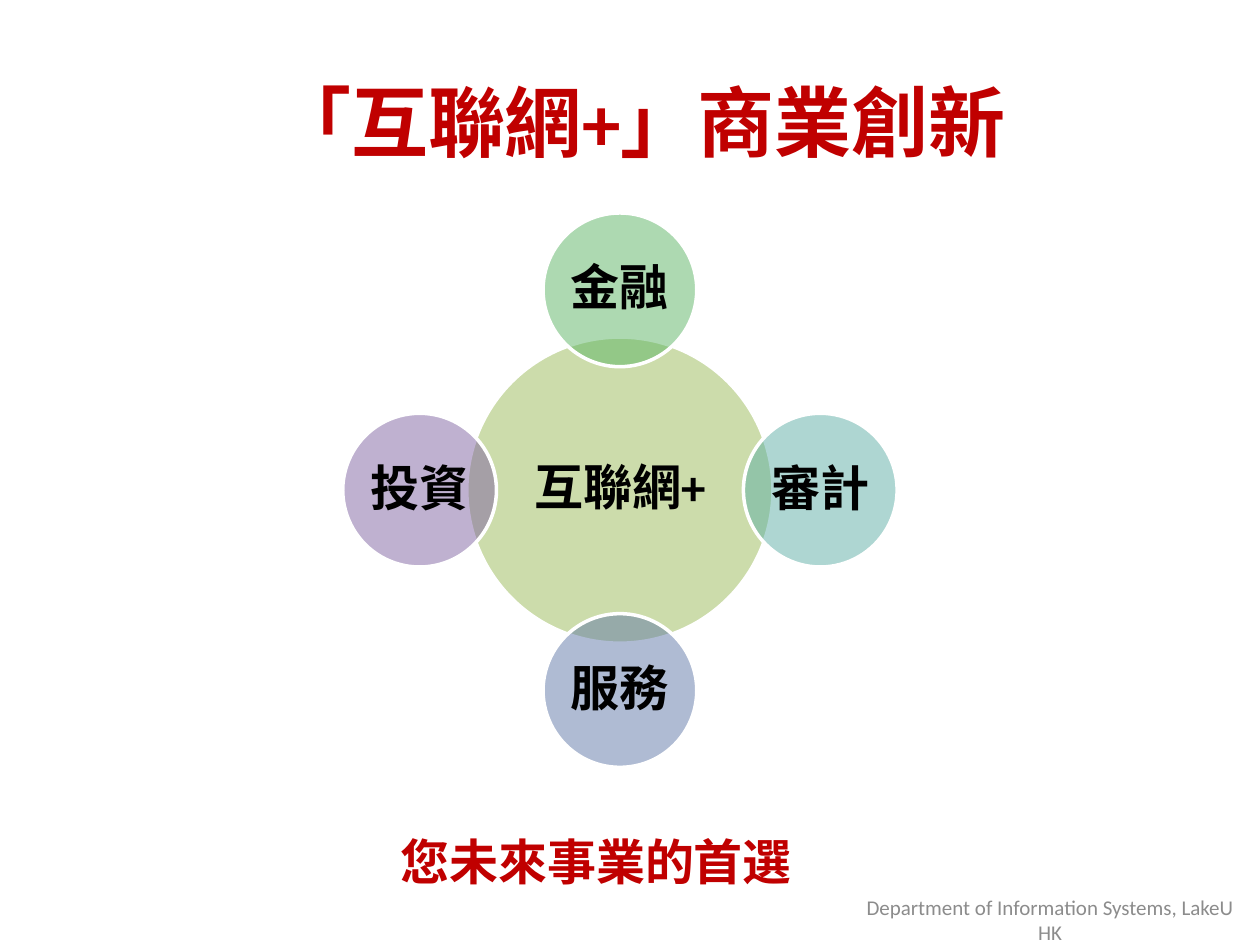
"""Build the slide on business innovation around the internet hub."""
from dataclasses import dataclass

from lxml import etree
from pptx import Presentation
from pptx.dml.color import RGBColor
from pptx.enum.shapes import MSO_SHAPE
from pptx.enum.text import MSO_ANCHOR, MSO_AUTO_SIZE, PP_ALIGN
from pptx.oxml.ns import qn
from pptx.shapes.autoshape import Shape
from pptx.shapes.shapetree import GroupShapes
from pptx.slide import Slide
from pptx.text.text import TextFrame
from pptx.util import Inches, Pt

OVAL = MSO_SHAPE.OVAL
MIDDLE, TOP = MSO_ANCHOR.MIDDLE, MSO_ANCHOR.TOP
CENTER, LEFT = PP_ALIGN.CENTER, PP_ALIGN.LEFT
FIT_SHAPE = MSO_AUTO_SIZE.SHAPE_TO_FIT_TEXT
TITLE_ONLY = 5
HUB_X, HUB_Y = 4.92, 3.89
HUB_SIZE, SATELLITE_SIZE, ORBIT = 2.43, 1.22, 1.59


@dataclass(frozen=True)
class Theme:
    """Colours, type sizes and font of the slide."""

    font: str = "Calibri"
    accent: str = "C00000"
    ink: str = "000000"
    muted: str = "8C8C8C"
    outline: str = "FFFFFF"
    hub: str = "9BBB59"
    finance: str = "5CB565"
    audit: str = "5EAFA6"
    service: str = "6179A8"
    investment: str = "8064A2"
    opacity: int = 50
    title_size: int = 44
    body_size: int = 28
    footer_size: int = 12


THEME = Theme()


@dataclass(frozen=True)
class Circle:
    """A labelled circle, placed by its steps from the hub."""

    label: str
    color: str
    across: int = 0
    down: int = 0
    size: float = SATELLITE_SIZE


CIRCLES = (
    Circle("互聯網+", THEME.hub, size=HUB_SIZE),
    Circle("金融", THEME.finance, down=-1),
    Circle("審計", THEME.audit, across=1),
    Circle("服務", THEME.service, down=1),
    Circle("投資", THEME.investment, across=-1),
)


def write_text(frame: TextFrame, text: str, size: int, color: str,
               bold: bool = True, align: PP_ALIGN = CENTER) -> None:
    """Put one formatted line of text in a frame."""
    para = frame.paragraphs[0]
    para.alignment = align
    span = para.add_run()
    span.text = text
    font_format = {"name": THEME.font, "size": Pt(size), "bold": bold}
    for name, value in font_format.items():
        setattr(span.font, name, value)
    span.font.color.rgb = RGBColor.from_string(color)


def set_opacity(shape: Shape, percent: int) -> None:
    """Make the solid fill of a shape see-through."""
    color = shape.element.spPr.find(qn("a:solidFill"))[0]
    etree.SubElement(color, qn("a:alpha")).set("val", str(percent * 1000))


def draw_circle(shapes: GroupShapes, circle: Circle) -> None:
    """Draw a circle with its label."""
    left = HUB_X + circle.across * ORBIT - circle.size / 2
    top = HUB_Y + circle.down * ORBIT - circle.size / 2
    shape = shapes.add_shape(OVAL, Inches(left), Inches(top),
                             Inches(circle.size), Inches(circle.size))
    shape.shadow.inherit = False
    shape.fill.solid()
    shape.fill.fore_color.rgb = RGBColor.from_string(circle.color)
    set_opacity(shape, THEME.opacity)
    shape.line.color.rgb = RGBColor.from_string(THEME.outline)
    shape.line.width = Pt(2)
    margin = Inches(0.04)
    frame_format = {
        "margin_left": margin, "margin_right": margin,
        "margin_top": margin, "margin_bottom": margin,
        "vertical_anchor": MIDDLE, "word_wrap": False,
    }
    for name, value in frame_format.items():
        setattr(shape.text_frame, name, value)
    write_text(shape.text_frame, circle.label, THEME.body_size, THEME.ink)
    shape.text_frame.paragraphs[0].line_spacing = 0.9


def add_title(page: Slide, text: str) -> None:
    """Place and fill the title."""
    title = page.shapes.title
    place = {"left": 0.58, "top": 0.33, "width": 9, "height": 1.25}
    for name, value in place.items():
        setattr(title, name, Inches(value))
    title.text_frame.vertical_anchor = MIDDLE
    write_text(title.text_frame, text, THEME.title_size, THEME.accent)


def add_text_box(page: Slide, left: float, top: float, width: float,
                 height: float, wrap: bool, anchor: MSO_ANCHOR) -> TextFrame:
    """Add an empty text box and return its frame."""
    box = page.shapes.add_textbox(Inches(left), Inches(top),
                                  Inches(width), Inches(height))
    box.text_frame.word_wrap = wrap
    box.text_frame.vertical_anchor = anchor
    return box.text_frame


def main() -> None:
    """Build and save the deck."""
    deck = Presentation()
    deck.slide_width, deck.slide_height = Inches(10), Inches(7.5)
    page = deck.slides.add_slide(deck.slide_layouts[TITLE_ONLY])
    add_title(page, "「互聯網+」商業創新")
    diagram = page.shapes.add_group_shape()
    for circle in CIRCLES:
        draw_circle(diagram.shapes, circle)
    slogan = add_text_box(page, 3.08, 6.55, 3.34, 0.57, False, TOP)
    slogan.auto_size = FIT_SHAPE
    write_text(slogan, "您未來事業的首選", THEME.body_size, THEME.accent, align=LEFT)
    footer = add_text_box(page, 6.67, 7.1, 3.33, 0.4, True, MIDDLE)
    write_text(footer, "Department of Information Systems, LakeU HK",
               THEME.footer_size, THEME.muted, bold=False)
    deck.save("out.pptx")


if __name__ == "__main__":
    main()
